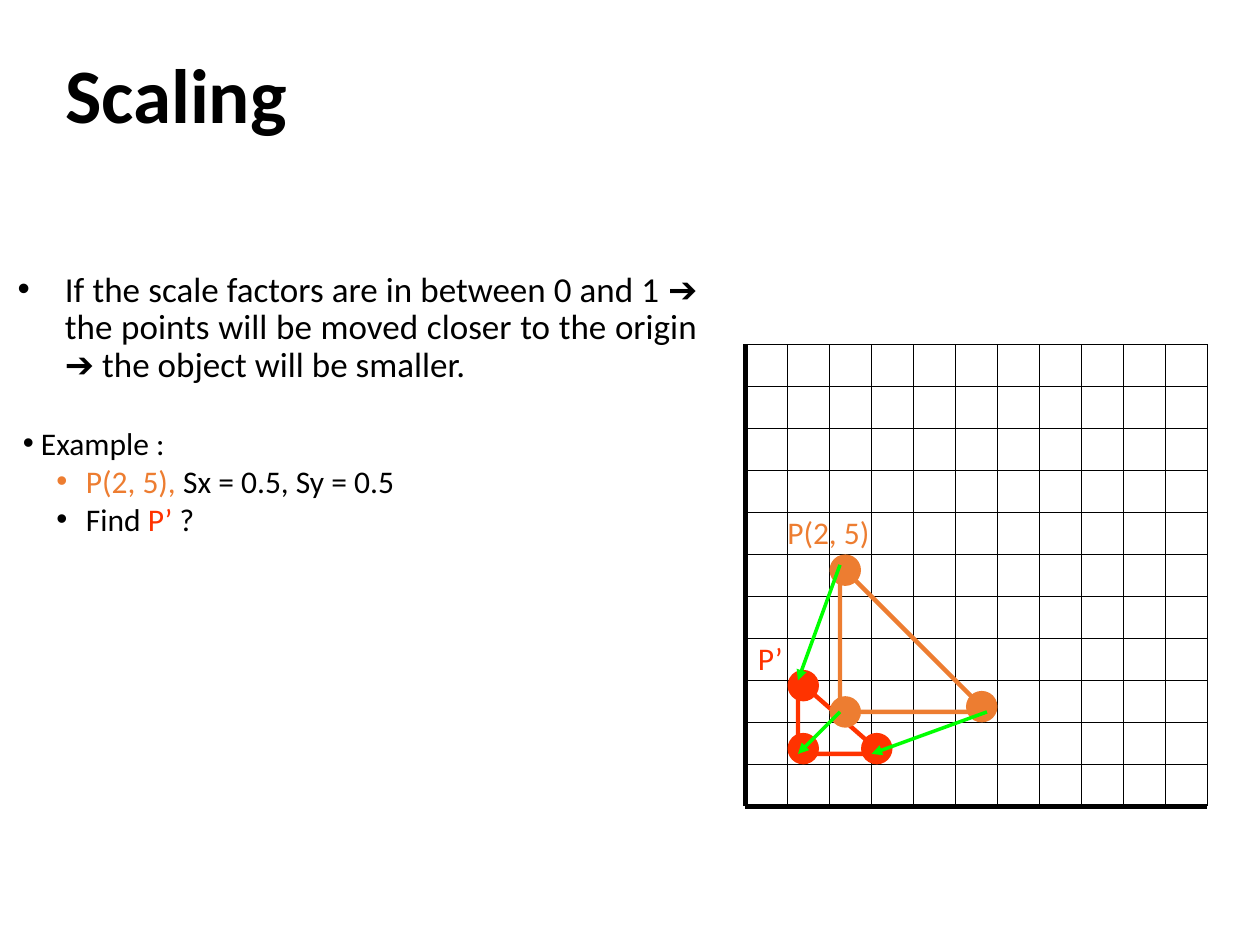
from lxml import etree
from pptx import Presentation
from pptx import util as u
from pptx.dml.color import RGBColor
from pptx.enum import shapes, text
from pptx.oxml.ns import qn

EMU_PER_PX = 914400 // 120
FONT = "Calibri"
COLORS = {"ink": "000000", "before": "ED7D31", "after": "FF3300", "move": "00FF00"}
GRID_LEFT, GRID_TOP, CELL, CELLS = 710, 328, 40, 11
DOT = 30


def px(n):
    return u.Emu(n * EMU_PER_PX)


def box(*lengths):
    return [px(n) for n in lengths]


def color(name):
    return RGBColor.from_string(COLORS[name])


def set_attrs(obj, values):
    for name, value in values.items():
        setattr(obj, name, value)


def add_runs(p, size, runs, bold=False):
    for words, name in runs:
        r = p.add_run()
        r.text = words
        set_attrs(r.font, {"name": FONT, "size": u.Pt(size), "bold": bold})
        r.font.color.rgb = color(name)


def add_bullet(p, margin=0, indent=0):
    pPr = p._p.get_or_add_pPr()
    pPr.set("marL", str(px(margin)))
    pPr.set("indent", str(px(indent)))
    etree.SubElement(pPr, qn("a:buFont")).set("typeface", "Arial")
    etree.SubElement(pPr, qn("a:buChar")).set("char", "•")


def add_title(s, words):
    sp = s.shapes.title
    set_attrs(sp, dict(zip(("left", "top", "width", "height"), box(50, 13, 1020, 150))))
    tf = sp.text_frame
    set_attrs(tf, {"vertical_anchor": text.MSO_ANCHOR.MIDDLE, "word_wrap": True})
    p = tf.paragraphs[0]
    p.alignment = text.PP_ALIGN.LEFT
    add_runs(p, 44, [(words, "ink")], bold=True)


def add_text(s, bounds, wrap=True):
    tf = s.shapes.add_textbox(*box(*bounds)).text_frame
    tf.word_wrap = wrap
    return tf


def add_label(s, bounds, words, name):
    tf = add_text(s, bounds, wrap=False)
    add_runs(tf.paragraphs[0], 18, [(words, name)])


def add_statement(s):
    p = add_text(s, (5, 253, 671, 230)).paragraphs[0]
    set_attrs(p, {"alignment": text.PP_ALIGN.JUSTIFY, "line_spacing": 0.9,
                  "space_before": u.Pt(4)})
    add_bullet(p, 45, -45)
    add_runs(p, 20, [("If the scale factors are in between 0 and 1 ➔ the points will be "
                      "moved closer to the origin ➔ the object will be smaller.", "ink")])


def add_example(s):
    tf = add_text(s, (10, 398, 600, 156))
    p = tf.paragraphs[0]
    add_bullet(p)
    add_runs(p, 18, [(" Example :", "ink")])
    for runs in (
        [("P(2, 5), ", "before"), ("Sx = 0.5, Sy = 0.5", "ink")],
        [("Find ", "ink"), ("P’", "after"), (" ?", "ink")],
    ):
        p = tf.add_paragraph()
        p.level = 1
        add_bullet(p, 60, -28)
        add_runs(p, 18, runs)


def add_line(s, start, end, name, width, arrow=False):
    sp = s.shapes.add_connector(shapes.MSO_CONNECTOR.STRAIGHT, *box(*start, *end))
    sp.line.color.rgb = color(name)
    sp.line.width = u.Pt(width)
    if arrow:
        etree.SubElement(sp.line._get_or_add_ln(), qn("a:tailEnd")).set("type", "triangle")
    etree.SubElement(sp._element.spPr, qn("a:effectLst"))


def add_grid(s):
    right, bottom = GRID_LEFT + CELL * CELLS, GRID_TOP + CELL * CELLS
    for i in range(CELLS + 1):
        x, y = GRID_LEFT + CELL * i, GRID_TOP + CELL * i
        add_line(s, (x, GRID_TOP), (x, bottom), "ink", 3 if i == 0 else 0.75)
        add_line(s, (GRID_LEFT, y), (right, y), "ink", 3 if i == CELLS else 0.75)


def add_dot(s, x, y, name):
    sp = s.shapes.add_shape(shapes.MSO_SHAPE.OVAL, *box(x, y, DOT, DOT))
    sp.shadow.inherit = False
    sp.fill.solid()
    sp.fill.fore_color.rgb = color(name)
    sp.line.fill.background()


def add_triangle(s, bounds, dots, name):
    for x, y in dots:
        add_dot(s, x, y, name)
    sp = s.shapes.add_shape(shapes.MSO_SHAPE.RIGHT_TRIANGLE, *box(*bounds))
    sp.shadow.inherit = False
    sp.fill.background()
    sp.line.color.rgb = color(name)
    sp.line.width = u.Pt(2.5)


def main():
    prs = Presentation()
    set_attrs(prs, {"slide_width": px(1200), "slide_height": px(900)})
    s = prs.slides.add_slide(prs.slide_layouts[5])
    add_title(s, "Scaling")
    add_statement(s)
    add_grid(s)
    add_triangle(s, (760, 648, 80, 70), [(750, 698), (820, 698), (750, 638)], "after")
    add_triangle(s, (800, 538, 140, 140), [(790, 663), (920, 658), (790, 528)], "before")
    for start, end in (
        ((800, 678), (760, 718)),
        ((800, 538), (760, 648)),
        ((940, 678), (830, 718)),
    ):
        add_line(s, start, end, "move", 2, arrow=True)
    add_label(s, (738, 483, 108, 48), "P(2, 5)", "before")
    add_label(s, (710, 603, 53, 48), "P’", "after")
    add_example(s)
    prs.save("out.pptx")


if __name__ == "__main__":
    main()
